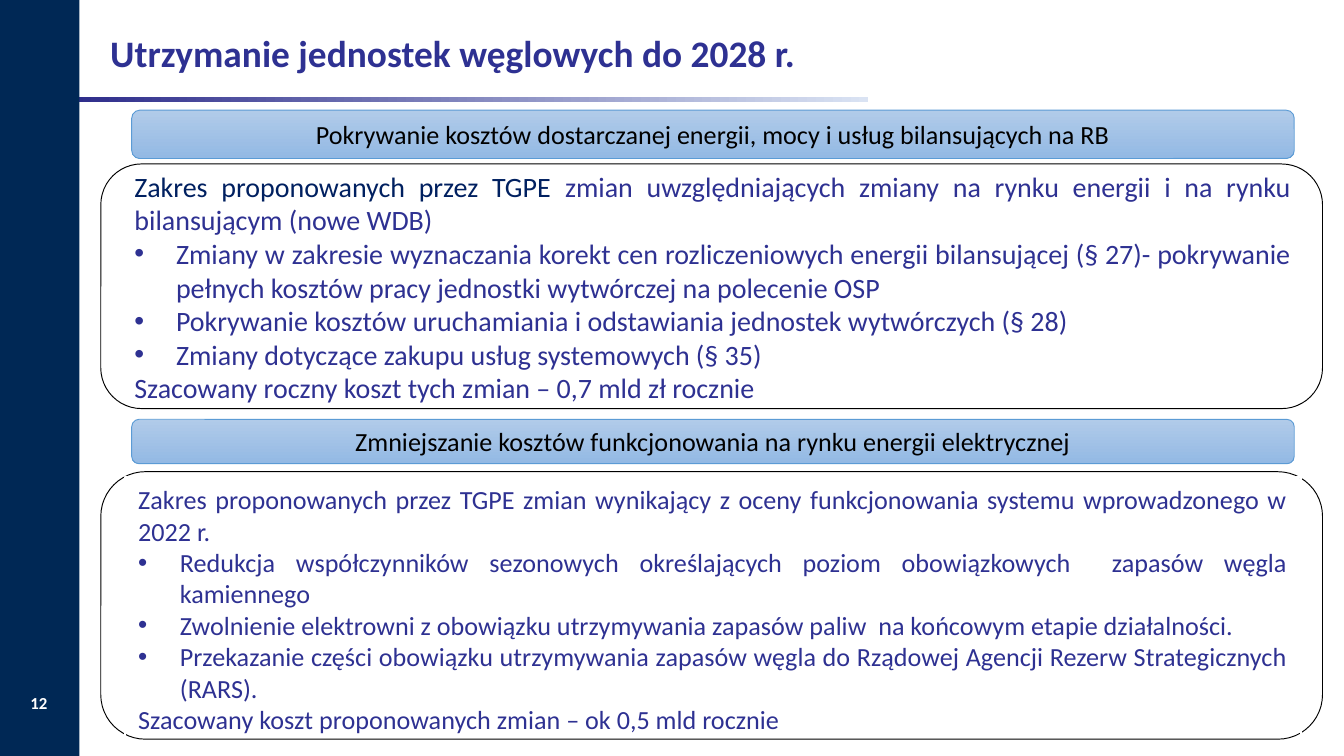
from dataclasses import dataclass

from lxml.etree import SubElement
from pptx import Presentation
from pptx.dml.color import RGBColor
from pptx.enum.shapes import MSO_SHAPE as Shape
from pptx.enum.text import MSO_ANCHOR as Anchor, MSO_AUTO_SIZE as AutoSize, PP_ALIGN as Align
from pptx.oxml.ns import qn
from pptx.util import Inches, Pt


@dataclass(frozen=True)
class Theme:
    font: str = "Calibri"
    indigo: str = "2E3192"
    navy: str = "002060"
    sidebar: str = "002855"
    white: str = "FFFFFF"
    black: str = "000000"
    header_line: str = "5B9BD5"
    header_fill: tuple = ("B1CBE9", "93B9E4")
    rule_fill: tuple = ("DAE3F3", "2E2D8B")
    title_size: int = 20
    upper_size: int = 15
    text_size: int = 14
    number_size: int = 9


THEME = Theme()
WIDTH, HEIGHT = Inches(10), Inches(5.625)
INSETS = (0.07, 0.04)

# Shared columns as (left, width), in percent of the slide's width
FRAME_COLUMN = (7.5, 90.9)
TEXT_COLUMN = (9.3, 87.5)
HEADER_COLUMN = (9.8, 86.5)
# Rows as (top, height), in percent of the slide's height
UPPER_ROW = (21.69, 32.36)
LOWER_ROW = (62.4, 35.38)
LOWER_TEXT_ROW = (63.11, 35.38)

# Paragraphs: (bulleted, alignment, runs as (text, colour))
UPPER_TEXT = [
    (False, Align.JUSTIFY, [
        ("Zakres proponowanych przez TGPE ", THEME.navy),
        ("zmian uwzględniających zmiany na rynku energii i na rynku "
         "bilansującym (nowe WDB)", THEME.indigo)]),
    (True, Align.JUSTIFY, [
        ("Zmiany w zakresie wyznaczania korekt cen rozliczeniowych energii "
         "bilansującej (§ 27)- pokrywanie pełnych kosztów pracy jednostki "
         "wytwórczej na polecenie OSP", THEME.indigo)]),
    (True, Align.JUSTIFY, [
        ("Pokrywanie kosztów uruchamiania i odstawiania jednostek "
         "wytwórczych (§ 28)", THEME.indigo)]),
    (True, Align.JUSTIFY, [
        ("Zmiany dotyczące zakupu usług systemowych (§ 35)", THEME.indigo)]),
    (False, Align.LEFT, [
        ("Szacowany roczny koszt tych zmian – 0,7 mld zł rocznie", THEME.indigo)]),
]
LOWER_TEXT = [
    (False, Align.JUSTIFY, [
        ("Zakres proponowanych przez TGPE zmian wynikający z oceny "
         "funkcjonowania systemu wprowadzonego w 2022 r.", THEME.indigo)]),
    (True, Align.JUSTIFY, [
        ("Redukcja współczynników sezonowych określających poziom "
         "obowiązkowych  zapasów węgla kamiennego", THEME.indigo)]),
    (True, Align.JUSTIFY, [
        ("Zwolnienie elektrowni z obowiązku utrzymywania zapasów paliw  na "
         "końcowym etapie działalności.", THEME.indigo)]),
    (True, Align.JUSTIFY, [
        ("Przekazanie części obowiązku utrzymywania zapasów węgla do "
         "Rządowej Agencji Rezerw Strategicznych (RARS).", THEME.indigo)]),
    (False, Align.JUSTIFY, [
        ("Szacowany koszt proponowanych zmian – ok 0,5 mld rocznie", THEME.indigo)]),
]


def place(column, row):
    """Turn percent shares into left, top, width and height."""
    (left, width), (top, height) = column, row
    return (int(WIDTH * left / 100), int(HEIGHT * top / 100),
            int(WIDTH * width / 100), int(HEIGHT * height / 100))


def move(shape, column, row):
    shape.left, shape.top, shape.width, shape.height = place(column, row)


def set_frame(shape, anchor, insets=(0.1, 0.05), auto_size=AutoSize.NONE):
    frame = shape.text_frame
    frame.word_wrap = True
    frame.auto_size = auto_size
    frame.vertical_anchor = anchor
    frame.margin_left = frame.margin_right = Inches(insets[0])
    frame.margin_top = frame.margin_bottom = Inches(insets[1])
    return frame


def add_run(paragraph, text, size, color, bold=False):
    run = paragraph.add_run()
    run.text = text
    font = run.font
    font.name, font.size, font.bold = THEME.font, Pt(size), bold
    font.color.rgb = RGBColor.from_string(color)


def set_bullet(paragraph, bulleted):
    properties = paragraph._p.get_or_add_pPr()
    indent = Inches(0.31) if bulleted else 0
    properties.set("marL", str(indent))
    properties.set("indent", str(-indent))
    if bulleted:
        SubElement(properties, qn("a:buFont"), typeface="Arial")
        SubElement(properties, qn("a:buChar"), char="•")
    else:
        SubElement(properties, qn("a:buNone"))


def fill_list(frame, paragraphs, size):
    for index, (bulleted, alignment, runs) in enumerate(paragraphs):
        paragraph = frame.add_paragraph() if index else frame.paragraphs[0]
        set_bullet(paragraph, bulleted)
        paragraph.alignment = alignment
        paragraph.space_before = Pt(0)
        for text, color in runs:
            add_run(paragraph, text, size, color)


def add_panel(slide, kind, column, row, fill=None, line=None, line_width=0.5):
    """Add a shape; fill is a colour, a (start, end, angle) gradient or None."""
    shape = slide.shapes.add_shape(kind, *place(column, row))
    shape.shadow.inherit = False
    if fill is None:
        shape.fill.background()
    elif isinstance(fill, str):
        shape.fill.solid()
        shape.fill.fore_color.rgb = RGBColor.from_string(fill)
    else:
        *colors, angle = fill
        shape.fill.gradient()
        shape.fill.gradient_angle = angle
        for stop, color in zip(shape.fill.gradient_stops, colors):
            stop.color.rgb = RGBColor.from_string(color)
    if line:
        shape.line.color.rgb = RGBColor.from_string(line)
        shape.line.width = Pt(line_width)
    else:
        shape.line.fill.background()
    return shape


def add_frame(slide, row):
    return add_panel(slide, Shape.ROUNDED_RECTANGLE, FRAME_COLUMN, row,
                     THEME.white, THEME.black)


def add_header(slide, row, text):
    header = add_panel(slide, Shape.ROUNDED_RECTANGLE, HEADER_COLUMN, row,
                       (*THEME.header_fill, 270), THEME.header_line)
    paragraph = set_frame(header, Anchor.MIDDLE).paragraphs[0]
    paragraph.alignment = Align.CENTER
    add_run(paragraph, text, THEME.text_size, THEME.black)


def add_title(slide, text):
    title = slide.shapes.title
    move(title, (7.5, 74.8), (0.18, 14.4))
    paragraph = set_frame(title, Anchor.MIDDLE, INSETS).paragraphs[0]
    paragraph.alignment = Align.LEFT
    paragraph.line_spacing = 0.9
    add_run(paragraph, text, THEME.title_size, THEME.indigo, bold=True)


def add_page_number(slide, number):
    box = slide.shapes.add_textbox(*place((1.1, 3.6), (90.31, 5.33)))
    paragraph = set_frame(box, Anchor.MIDDLE, INSETS).paragraphs[0]
    paragraph.alignment = Align.CENTER
    add_run(paragraph, number, THEME.number_size, THEME.white, bold=True)


def main():
    presentation = Presentation()
    presentation.slide_width, presentation.slide_height = WIDTH, HEIGHT
    slide = presentation.slides.add_slide(presentation.slide_layouts[1])

    # Sidebar, title and rule
    add_panel(slide, Shape.RECTANGLE, (5.5, 59.1), (12.8, 0.71), (*THEME.rule_fill, 180))
    add_panel(slide, Shape.RECTANGLE, (0, 5.9), (0, 100), THEME.sidebar)
    add_title(slide, "Utrzymanie jednostek węglowych do 2028 r.")
    add_page_number(slide, "12")

    # Upper section: the frame goes behind the body text
    body = slide.placeholders[1]
    move(body, TEXT_COLUMN, UPPER_ROW)
    body.element.addprevious(add_frame(slide, UPPER_ROW).element)
    fill_list(set_frame(body, Anchor.TOP, INSETS), UPPER_TEXT, THEME.upper_size)

    # Lower section
    add_frame(slide, LOWER_ROW)
    lower = add_panel(slide, Shape.RECTANGLE, TEXT_COLUMN, LOWER_TEXT_ROW,
                      line=THEME.white, line_width=0.75)
    frame = set_frame(lower, Anchor.TOP, auto_size=AutoSize.SHAPE_TO_FIT_TEXT)
    fill_list(frame, LOWER_TEXT, THEME.text_size)

    # Section headers
    add_header(slide, (55.47, 5.87),
               "Zmniejszanie kosztów funkcjonowania na rynku energii elektrycznej")
    add_header(slide, (14.58, 6.4),
               "Pokrywanie kosztów dostarczanej energii, mocy i usług bilansujących na RB")

    presentation.save("out.pptx")


if __name__ == "__main__":
    main()
